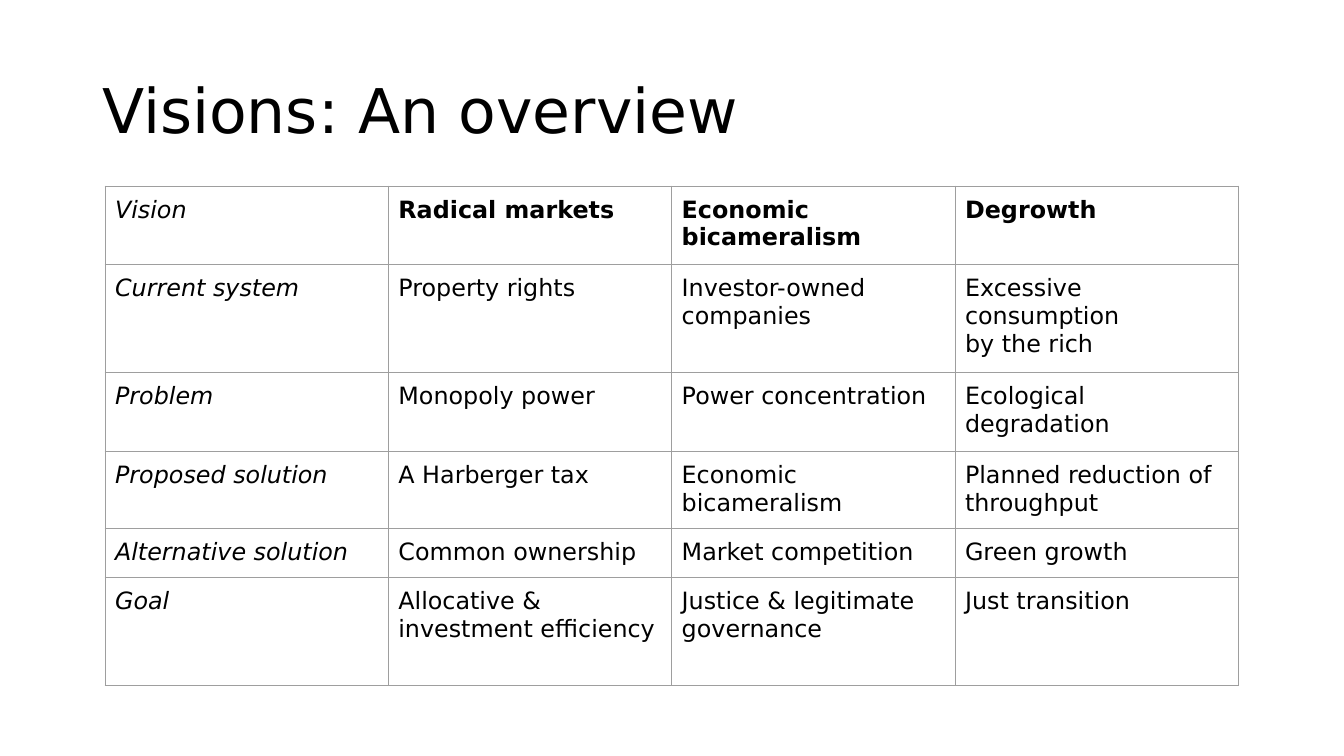
"""Build the slide that compares three economic visions in a table."""
import dataclasses

import lxml.etree
import pptx
import pptx.dml.color
import pptx.enum.text
import pptx.oxml.ns
import pptx.slide
import pptx.table
import pptx.text.text
import pptx.util
from pptx.util import Cm

FONT = "DejaVu Sans"
BLACK = "000000"
GRID = "9E9E9E"
COLUMN_WIDTH = Cm(7.14)


@dataclasses.dataclass
class VisionRow:
    height: float
    label: str
    entries: tuple[str, str, str]
    bold: bool = False


ROWS = [
    VisionRow(1.98, "Vision", ("Radical markets", "Economic bicameralism", "Degrowth"), bold=True),
    VisionRow(2.72, "Current system",
              ("Property rights", "Investor-owned companies", "Excessive consumption \vby the rich")),
    VisionRow(1.98, "Problem", ("Monopoly power", "Power concentration", "Ecological degradation")),
    VisionRow(1.24, "Proposed solution",
              ("A Harberger tax", "Economic bicameralism", "Planned reduction of throughput")),
    VisionRow(1.24, "Alternative solution", ("Common ownership", "Market competition", "Green growth")),
    VisionRow(2.72, "Goal",
              ("Allocative & investment efficiency", "Justice & legitimate governance", "Just transition")),
]


def rgb(value: str) -> pptx.dml.color.RGBColor:
    return pptx.dml.color.RGBColor.from_string(value)


def format_text(tf: pptx.text.text.TextFrame, size: float, bold: bool = False, italic: bool = False) -> None:
    for p in tf.paragraphs:
        for r in p.runs:
            r.font.name = FONT
            r.font.size = pptx.util.Pt(size)
            r.font.bold = bold
            r.font.italic = italic
            r.font.color.rgb = rgb(BLACK)


def add_borders(cell: pptx.table._Cell) -> None:
    qn = pptx.oxml.ns.qn
    tc_pr = cell._tc.get_or_add_tcPr()
    for side in ("lnL", "lnR", "lnT", "lnB"):
        ln = lxml.etree.SubElement(tc_pr, qn(f"a:{side}"), w=str(pptx.util.Pt(0.75)))
        fill = lxml.etree.SubElement(ln, qn("a:solidFill"))
        lxml.etree.SubElement(fill, qn("a:srgbClr"), val=GRID)


def fill_cell(cell: pptx.table._Cell, text: str, bold: bool, italic: bool) -> None:
    cell.margin_left = cell.margin_right = cell.margin_top = cell.margin_bottom = Cm(0.25)
    add_borders(cell)
    cell.fill.background()
    cell.text_frame.text = text
    format_text(cell.text_frame, 17, bold, italic)


def add_title(s: pptx.slide.Slide, text: str) -> None:
    tf = s.shapes.add_textbox(Cm(2.33), Cm(1.01), Cm(29.21), Cm(3.68)).text_frame
    tf.word_wrap = True
    tf.vertical_anchor = pptx.enum.text.MSO_ANCHOR.MIDDLE
    tf.text = text
    tf.paragraphs[0].line_spacing = 0.9
    format_text(tf, 44)


def add_vision_table(s: pptx.slide.Slide, rows: list[VisionRow]) -> None:
    columns = 1 + len(rows[0].entries)
    height = Cm(sum(row.height for row in rows))
    table = s.shapes.add_table(len(rows), columns, Cm(2.65), Cm(4.69), COLUMN_WIDTH * columns, height).table
    table.first_row = table.horz_banding = False
    for column in table.columns:
        column.width = COLUMN_WIDTH
    for i, row in enumerate(rows):
        table.rows[i].height = Cm(row.height)
        fill_cell(table.cell(i, 0), row.label, bold=False, italic=True)
        for j, entry in enumerate(row.entries, start=1):
            fill_cell(table.cell(i, j), entry, row.bold, italic=False)


def main() -> None:
    prs = pptx.Presentation()
    prs.slide_width, prs.slide_height = Cm(33.87), Cm(19.05)
    s = prs.slides.add_slide(prs.slide_layouts[6])
    add_title(s, "Visions: An overview")
    add_vision_table(s, ROWS)
    prs.save("out.pptx")


if __name__ == "__main__":
    main()
